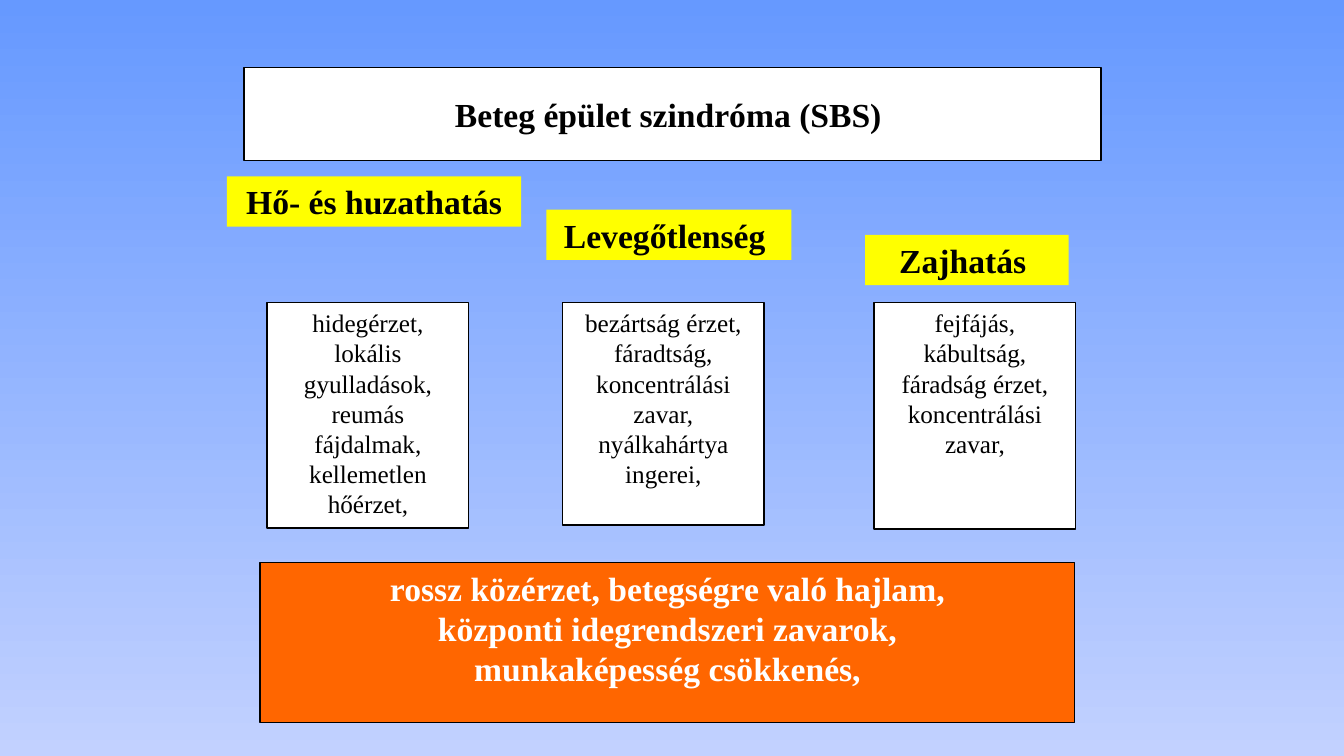
from dataclasses import dataclass

from pptx import Presentation
from pptx.dml.color import RGBColor
from pptx.enum.shapes import MSO_SHAPE as Shape
from pptx.enum.text import MSO_ANCHOR as Anchor, PP_ALIGN as Align
from pptx.util import Inches, Pt


@dataclass(frozen=True)
class Theme:
    font: str = "Times New Roman"
    heading: int = 24
    body: int = 18
    black: str = "000000"
    white: str = "FFFFFF"
    yellow: str = "FFFF00"
    orange: str = "FF6600"
    sky_top: str = "6699FF"
    sky_bottom: str = "C2D1FF"


THEME = Theme()

# Label text, label place (left, top, width), symptom place (left, height), symptoms
CAUSES = [
    ("Hő- és huzathatás", (2.25, 1.75, 2.92), (2.65, 2.24),
     ["hidegérzet,", "lokális gyulladások,", "reumás fájdalmak,",
      "kellemetlen hőérzet,"]),
    ("Levegőtlenség ", (5.42, 2.08, 2.43), (5.58, 2.21),
     ["bezártság érzet,", "fáradtság,", "koncentrálási zavar,",
      "nyálkahártya ingerei,"]),
    ("Zajhatás ", (8.58, 2.33, 2.02), (8.67, 2.25),
     ["fejfájás, kábultság,", "fáradság érzet,", "koncentrálási zavar,"]),
]
CONSEQUENCES = ["rossz közérzet, betegségre való hajlam,",
                "központi idegrendszeri zavarok,",
                "munkaképesség csökkenés,"]


def rgb(code):
    return RGBColor.from_string(code)


def paint_background(page):
    fill = page.background.fill
    fill.gradient()
    fill.gradient_angle = 270
    for stop, code in zip(fill.gradient_stops, (THEME.sky_top, THEME.sky_bottom)):
        stop.color.rgb = rgb(code)


def add_box(page, place, lines, fill=THEME.white, color=THEME.black,
            size=THEME.heading, bold=True, outlined=True, anchor=Anchor.TOP):
    box = page.shapes.add_shape(Shape.RECTANGLE, *map(Inches, place))
    box.shadow.inherit = False
    box.fill.solid()
    box.fill.fore_color.rgb = rgb(fill)
    if outlined:
        box.line.color.rgb = rgb(THEME.black)
        box.line.width = Pt(1)
    else:
        box.line.fill.background()

    frame = box.text_frame
    frame.word_wrap = True
    frame.vertical_anchor = anchor
    frame.text = "\n".join(lines)
    for para in frame.paragraphs:
        para.alignment = Align.CENTER
        para.font.name = THEME.font
        para.font.size = Pt(size)
        para.font.bold = bold
        para.font.color.rgb = rgb(color)


def add_cause(page, label, label_place, symptom_place, symptoms):
    left, height = symptom_place
    add_box(page, (left, 3, 2, height), symptoms, size=THEME.body, bold=False)
    add_box(page, (*label_place, 0.5), [label], fill=THEME.yellow, outlined=False)


def main():
    deck = Presentation()
    deck.slide_width, deck.slide_height = Inches(13.33), Inches(7.5)
    page = deck.slides.add_slide(deck.slide_layouts[6])
    paint_background(page)

    # Title
    add_box(page, (2.42, 0.67, 8.5, 0.92), ["Beteg épület szindróma (SBS) "],
            anchor=Anchor.MIDDLE)

    # Causes with their symptoms
    for cause in CAUSES:
        add_cause(page, *cause)

    # Consequences
    add_box(page, (2.58, 5.58, 8.08, 1.59), CONSEQUENCES,
            fill=THEME.orange, color=THEME.white)

    deck.save("out.pptx")


if __name__ == "__main__":
    main()
